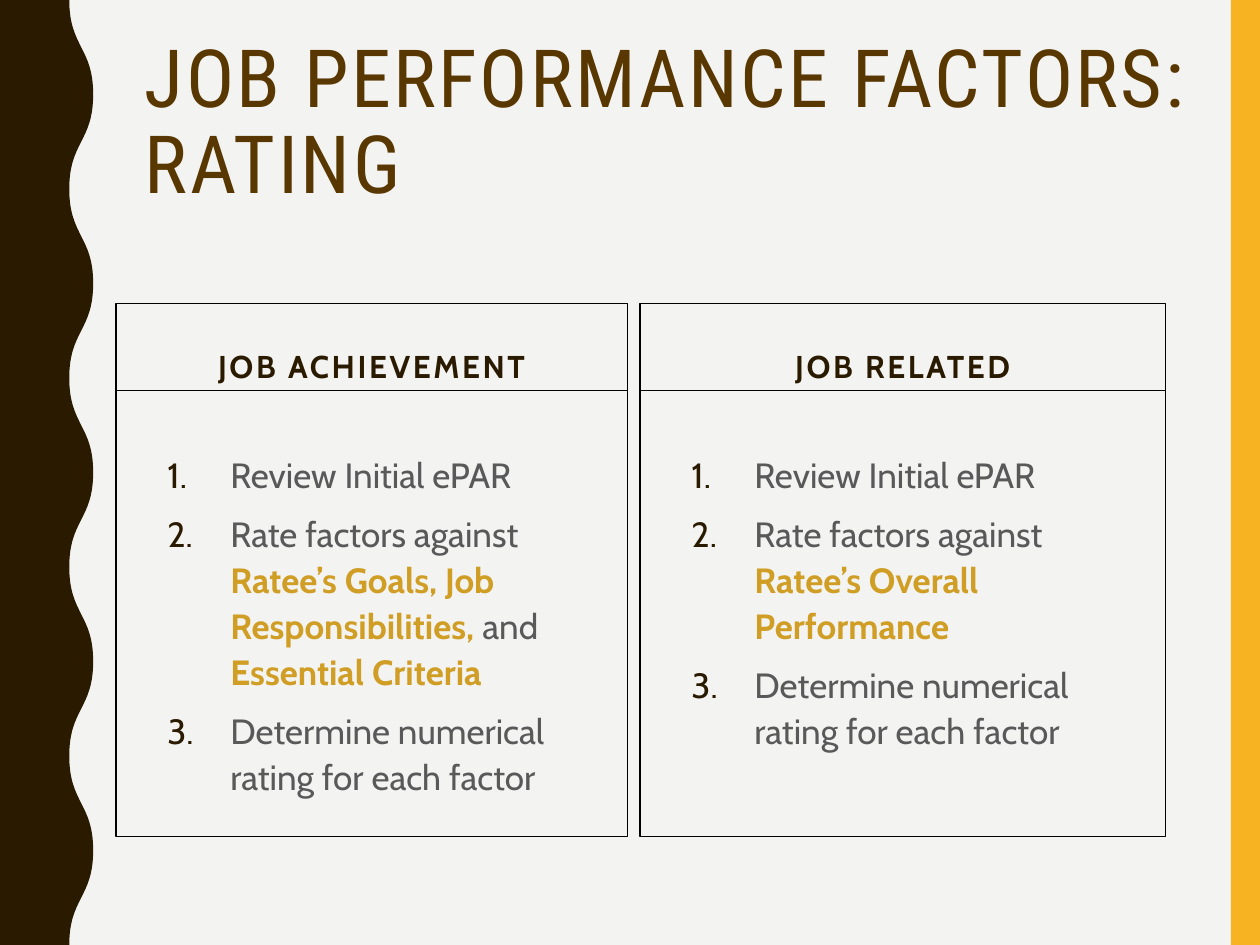
from lxml.etree import SubElement
from pptx import Presentation
from pptx.dml.color import RGBColor
from pptx.enum.shapes import MSO_SHAPE as SHAPE
from pptx.enum.text import MSO_ANCHOR as ANCHOR, MSO_AUTO_SIZE as AUTO, PP_ALIGN as ALIGN
from pptx.oxml.ns import qn
from pptx.util import Inches, Pt

PAPER = RGBColor(0xF3, 0xF3, 0xF2)
AMBER = RGBColor(0xF8, 0xB3, 0x23)
ESPRESSO = RGBColor(0x2A, 0x1A, 0x00)
BROWN = RGBColor(0x59, 0x37, 0x00)
GRAY = RGBColor(0x59, 0x59, 0x59)
GOLD = RGBColor(0xD0, 0x9E, 0x25)
BLACK = RGBColor(0, 0, 0)

W, H = 10, 7.5
HEAD_H, BODY_H = 0.69, 3.54
PANELS_TOP = 2.41

REVIEW = [("Review Initial ePAR", False)]
DETERMINE = [("Determine numerical rating for each factor", False)]
PANELS = [
    (0.92, 4.06, "JOB ACHIEVEMENT", [
        REVIEW,
        [("Rate factors against ", False),
         ("Ratee’s Goals, Job Responsibilities, ", True),
         ("and ", False),
         ("Essential Criteria", True)],
        DETERMINE]),
    (5.08, 4.17, "JOB RELATED", [
        REVIEW,
        [("Rate factors against ", False),
         ("Ratee’s Overall Performance", True)],
        DETERMINE]),
]


def add_run(p, text, font, size, color, bold=False, spacing=0):
    r = p.add_run()
    r.text = text
    r.font.name, r.font.size, r.font.bold = font, Pt(size), bold
    r.font.color.rgb = color
    if spacing:
        r.font._element.set("spc", str(int(spacing * 100)))


def paint(sp, color):
    sp.shadow.inherit = False
    sp.fill.solid()
    sp.fill.fore_color.rgb = color
    sp.line.fill.background()


def curve_line(line, start, end):
    middle = (start[1] + end[1]) // 2
    line.tag = qn("a:cubicBezTo")
    line.remove(line[0])
    for x, y in ((start[0], middle), (end[0], middle), end):
        pt = SubElement(line, qn("a:pt"))
        pt.set("x", str(x))
        pt.set("y", str(y))


def add_wave(slide, trough, crest, height, waves=5):
    half = height / waves / 2
    knots = [(Inches(crest if i % 2 else trough), Inches(i * half))
             for i in range(waves * 2 + 1)]
    builder = slide.shapes.build_freeform(*knots[0], scale=1)
    builder.add_line_segments(knots[1:] + [(0, Inches(height)), (0, 0)], close=True)
    sp = builder.convert_to_shape()
    lines = list(sp._element.iter(qn("a:lnTo")))
    for line, start, end in zip(lines, knots, knots[1:]):
        curve_line(line, start, end)
    paint(sp, ESPRESSO)


def add_side_bar(slide, width):
    bar = slide.shapes.add_shape(
        SHAPE.RECTANGLE, Inches(W - width), 0, Inches(width), Inches(H))
    paint(bar, AMBER)


def add_title(slide, x, y, w, h, text):
    title = slide.shapes.title
    title.left, title.top, title.width, title.height = map(Inches, (x, y, w, h))
    tf = title.text_frame
    tf.auto_size, tf.vertical_anchor, tf.word_wrap = AUTO.NONE, ANCHOR.TOP, True
    p = tf.paragraphs[0]
    p.alignment, p.line_spacing = ALIGN.LEFT, 0.9
    add_run(p, text, "Roboto Condensed", 45.9, BROWN, spacing=1.5)


def add_frame(slide, x, y, w, h, anchor):
    sp = slide.shapes.add_shape(SHAPE.RECTANGLE, *map(Inches, (x, y, w, h)))
    sp.shadow.inherit = False
    sp.fill.background()
    sp.line.color.rgb = BLACK
    sp.line.width = Pt(0.75)
    tf = sp.text_frame
    tf.word_wrap, tf.vertical_anchor = True, anchor
    return tf


def number(p):
    pPr = p._p.get_or_add_pPr()
    pPr.set("marL", str(Inches(0.81)))
    pPr.set("indent", str(Inches(-0.5)))
    color = SubElement(pPr, qn("a:buClr"))
    SubElement(color, qn("a:srgbClr")).set("val", str(ESPRESSO))
    SubElement(pPr, qn("a:buFont")).set("typeface", "Cabin")
    SubElement(pPr, qn("a:buAutoNum")).set("type", "arabicPeriod")


def add_panel(slide, x, y, w, heading, steps):
    p = add_frame(slide, x, y, w, HEAD_H, ANCHOR.BOTTOM).paragraphs[0]
    p.alignment, p.space_before = ALIGN.CENTER, Pt(7)
    add_run(p, heading, "Cabin", 18, ESPRESSO, bold=True, spacing=1.5)

    tf = add_frame(slide, x, y + HEAD_H, w, BODY_H, ANCHOR.TOP)
    tf.margin_top = Inches(0.47)
    for i, step in enumerate(steps):
        p = tf.add_paragraph() if i else tf.paragraphs[0]
        p.alignment, p.line_spacing, p.space_before = ALIGN.LEFT, 1.1, Pt(7)
        number(p)
        for text, key in step:
            add_run(p, text, "Cabin", 20, GOLD if key else GRAY, bold=key)


def main():
    prs = Presentation()
    prs.slide_width, prs.slide_height = Inches(W), Inches(H)
    slide = prs.slides.add_slide(prs.slide_layouts[5])
    slide.background.fill.solid()
    slide.background.fill.fore_color.rgb = PAPER
    add_side_bar(slide, 0.23)
    add_wave(slide, 0.55, 0.74, H)
    add_title(slide, 1.05, 0.25, 9, 0.87, "JOB PERFORMANCE FACTORS: RATING")
    for x, w, heading, steps in PANELS:
        add_panel(slide, x, PANELS_TOP, w, heading, steps)
    prs.save("out.pptx")


if __name__ == "__main__":
    main()
